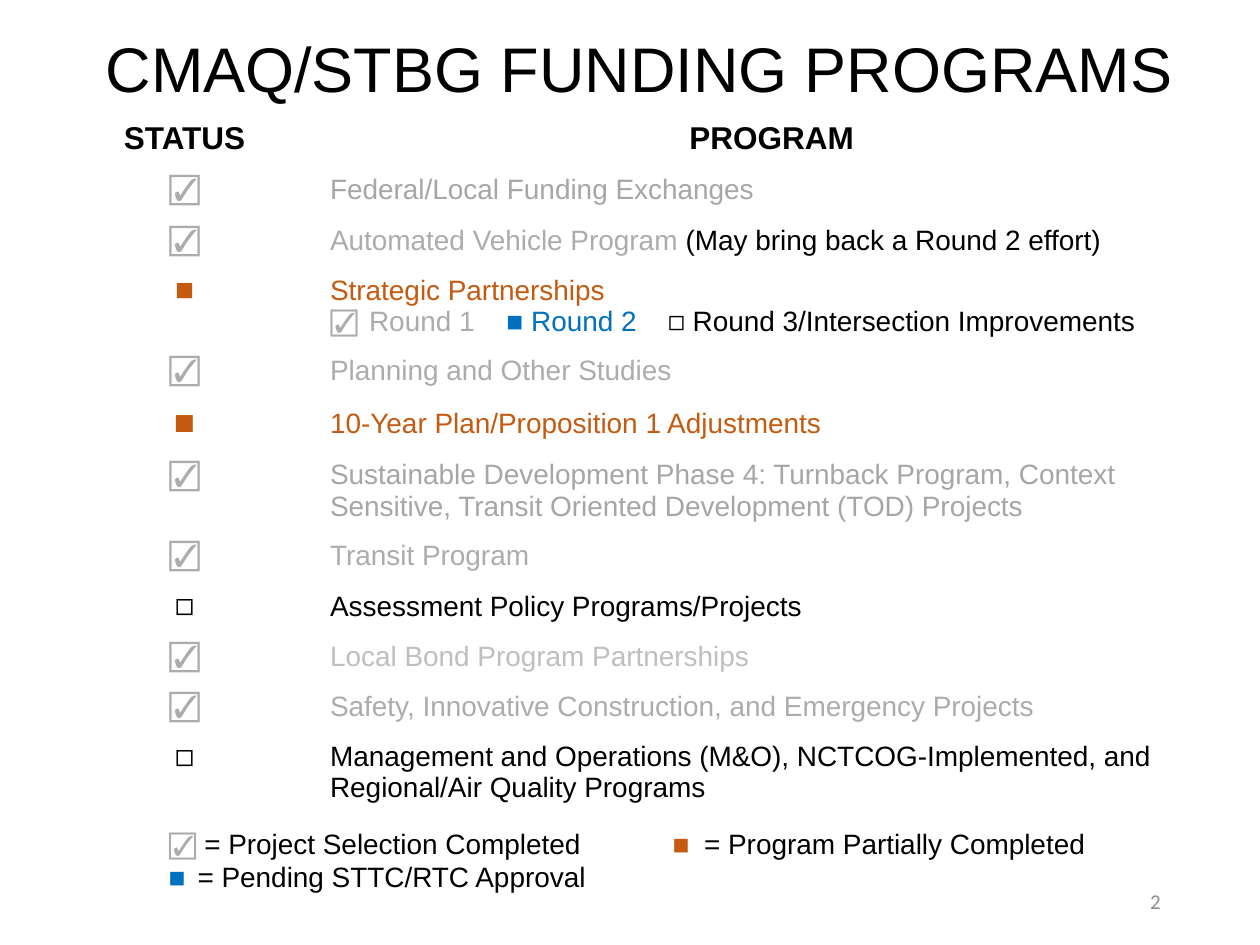
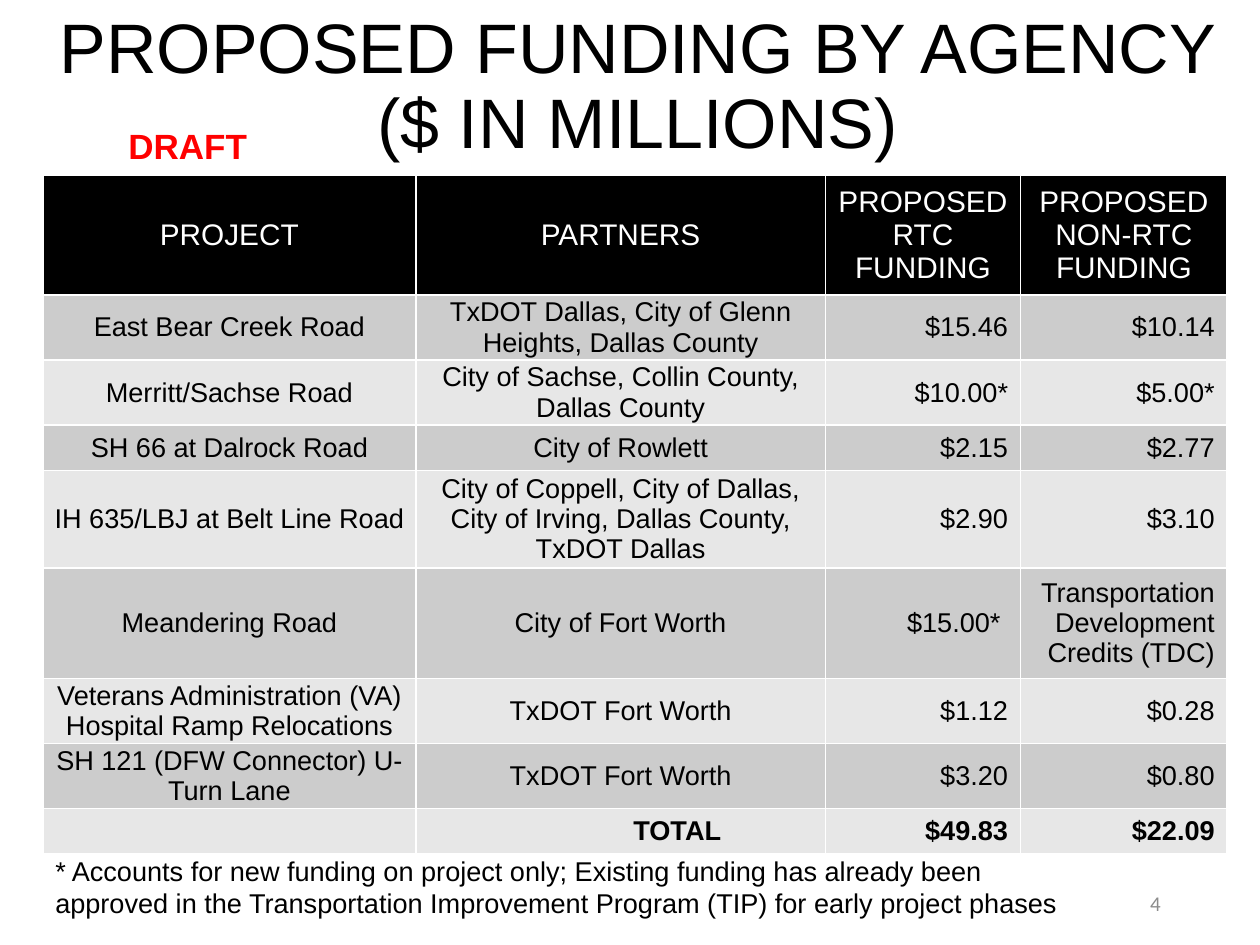
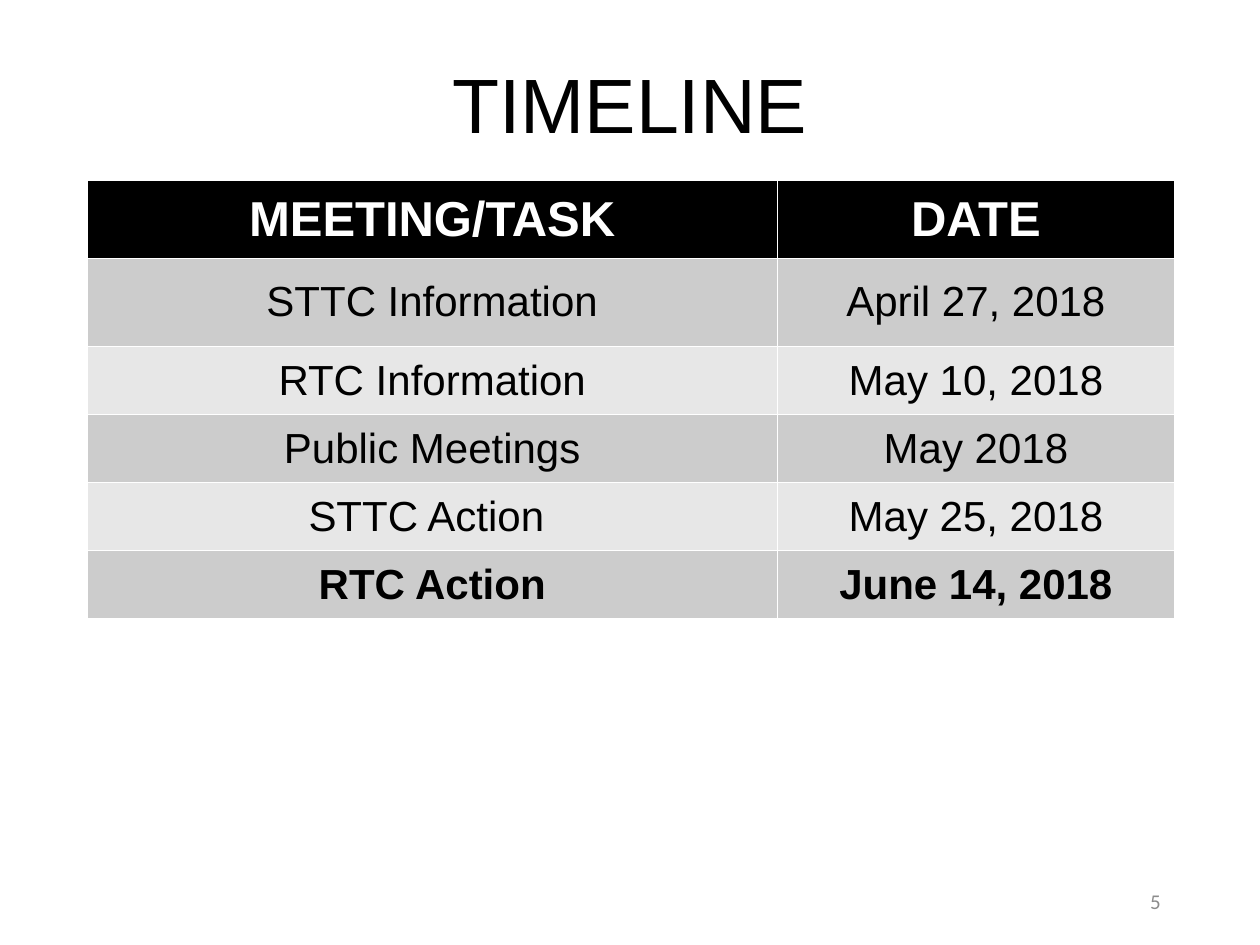
"""Builds three slides on funding programs, proposed funding and the timeline."""
from lxml import etree
from pptx import Presentation
from pptx import util as u
from pptx.dml.color import RGBColor
from pptx.enum import text
from pptx.oxml import ns

BLACK, WHITE, RED, PAGE_GREY = "000000", "FFFFFF", "FF0000", "8C8C8C"
DONE, DONE_DARK, DONE_LIGHT = "AFABAB", "A6A6A6", "BFBFBF"
PARTIAL, PENDING = "C55A11", "0070C0"
BANDS = "CCCCCC", "E7E7E7"
LEFT, CENTER, RIGHT = text.PP_ALIGN.LEFT, text.PP_ALIGN.CENTER, text.PP_ALIGN.RIGHT
TOP, MIDDLE = text.MSO_ANCHOR.TOP, text.MSO_ANCHOR.MIDDLE

COMPLETED = "☑", DONE, 18
PARTLY = "■", PARTIAL, 18
PARTLY_LARGE = "■", PARTIAL, 20
OPEN = "◻", BLACK, 18

PROGRAMS = [
    (0.23, COMPLETED, [[("Federal/Local Funding Exchanges", DONE_DARK)]]),
    (0.23, COMPLETED, [[("Automated Vehicle Program ", DONE),
                        ("(May bring back a Round 2 effort)", BLACK)]]),
    (0.37, PARTLY, [[("Strategic Partnerships", PARTIAL)],
                    [("☑", DONE), ("\tRound 1", DONE), ("\t■ ", PENDING, True),
                     ("Round 2", PENDING), ("\t◻ Round 3/Intersection Improvements", BLACK)]]),
    (0.37, COMPLETED, [[("Planning and Other Studies", DONE)]]),
    (0.4, PARTLY_LARGE, [[("10-Year Plan/Proposition 1 Adjustments", PARTIAL)]]),
    (0.59, COMPLETED, [[("Sustainable Development Phase 4: Turnback Program, Context Sensitive, "
                         "Transit Oriented Development (TOD) Projects", DONE_DARK)]]),
    (0.37, COMPLETED, [[("Transit Program", DONE)]]),
    (0.37, OPEN, [[("Assessment Policy Programs/Projects", BLACK)]]),
    (0.37, COMPLETED, [[("Local Bond Program Partnerships", DONE_LIGHT)]]),
    (0.4, COMPLETED, [[("Safety, Innovative Construction, and Emergency Projects", DONE)]]),
    (0.59, OPEN, [[("Management and Operations (M&O), NCTCOG-Implemented, and "
                    "Regional/Air Quality Programs", BLACK)]]),
]
ROUND_TABS = 0.31, 1.4, 2.68

LEGEND = [
    [("☑ ", DONE, True), ("= Project Selection Completed", BLACK),
     ("\t■", PARTIAL, True), ("\t= Program Partially Completed", BLACK)],
    [("■", PENDING, True), ("\t= Pending STTC/RTC Approval", BLACK)],
]
LEGEND_TABS = 0.23, 4, 4.25

FUNDING = [
    ("PROJECT", "PARTNERS", "PROPOSED RTC FUNDING", "PROPOSED NON-RTC FUNDING"),
    ("East Bear Creek Road", "TxDOT Dallas, City of Glenn Heights, Dallas County",
     "$15.46", "$10.14"),
    ("Merritt/Sachse Road", "City of Sachse, Collin County, Dallas County", "$10.00*", "$5.00*"),
    ("SH 66 at Dalrock Road", "City of Rowlett", "$2.15", "$2.77"),
    ("IH 635/LBJ at Belt Line Road",
     "City of Coppell, City of Dallas, City of Irving, Dallas County, TxDOT Dallas",
     "$2.90", "$3.10"),
    ("Meandering Road", "City of Fort Worth", "$15.00* ",
     "Transportation Development Credits (TDC)"),
    ("Veterans Administration (VA) Hospital Ramp Relocations", "TxDOT Fort Worth",
     "$1.12", "$0.28"),
    ("SH 121 (DFW Connector) U-Turn Lane", "TxDOT Fort Worth", "$3.20", "$0.80"),
    ("", "TOTAL", "$49.83", "$22.09"),
]
FUNDING_NOTE = ("* Accounts for new funding on project only; Existing funding has already been "
                "approved in the Transportation Improvement Program (TIP) for early project phases")

TIMELINE = [
    ("MEETING/TASK", "DATE"),
    ("STTC Information", "April 27, 2018"),
    ("RTC Information", "May 10, 2018"),
    ("Public Meetings", "May 2018"),
    ("STTC Action ", "May 25, 2018"),
    ("RTC Action", "June 14, 2018"),
]


def color(value):
    return RGBColor.from_string(value)


def write(frame, lines, size, align=LEFT, font="Arial", spacing=None, tabs=()):
    """Fill a text frame with lines of (text, colour, bold) runs."""
    for index, line in enumerate(lines):
        paragraph = frame.add_paragraph() if index else frame.paragraphs[0]
        paragraph.alignment = align
        if spacing:
            paragraph.line_spacing = spacing
        if tabs:
            stops = etree.SubElement(paragraph._p.get_or_add_pPr(), ns.qn("a:tabLst"))
            for position in tabs:
                etree.SubElement(stops, ns.qn("a:tab"), pos=str(u.Inches(position)), algn="l")
        for content, fill, *bold in line:
            run = paragraph.add_run()
            run.text = content
            run.font.name, run.font.size = font, u.Pt(size)
            run.font.bold = bool(bold and bold[0])
            run.font.color.rgb = color(fill)


def add_text(slide, box, lines, size, anchor=TOP, **style):
    frame = slide.shapes.add_textbox(*map(u.Inches, box)).text_frame
    frame.word_wrap = True
    frame.vertical_anchor = anchor
    write(frame, lines, size, **style)


def add_slide(presentation, title, box, size, number, number_top=6.95):
    slide = presentation.slides.add_slide(presentation.slide_layouts[6])
    add_text(slide, box, [[(title, BLACK)]], size, MIDDLE, align=CENTER, spacing=0.9)
    add_text(slide, (7.06, number_top, 2.25, 0.4), [[(number, PAGE_GREY)]], 12, MIDDLE,
             align=RIGHT, font="Calibri")
    return slide


def add_table(slide, left, top, widths, heights):
    box = map(u.Inches, (left, top, sum(widths), sum(heights)))
    table = slide.shapes.add_table(len(heights), len(widths), *box).table
    for column, width in zip(table.columns, widths):
        column.width = u.Inches(width)
    for row, height in zip(table.rows, heights):
        row.height = u.Inches(height)
    return table


def fill_banded(table, rows, head_size, body_size, head_bold, aligns):
    """Write a black header, striped body rows and a bold last row."""
    last = len(rows) - 1
    for r, row in enumerate(rows):
        for c, content in enumerate(row):
            cell = table.cell(r, c)
            cell.vertical_anchor = MIDDLE
            cell.fill.solid()
            cell.fill.fore_color.rgb = color(BANDS[(r - 1) % 2] if r else BLACK)
            run = (content, BLACK, r == last) if r else (content, WHITE, head_bold)
            write(cell.text_frame, [[run]] if content else [], body_size if r else head_size,
                  align=aligns[c] if r else CENTER)


def build_programs(presentation):
    slide = add_slide(presentation, "CMAQ/STBG FUNDING PROGRAMS", (0.44, 0.07, 9.27, 1.01), 36, "2")
    heights = [0.37] + [height for height, _, _ in PROGRAMS]
    table = add_table(slide, 0.41, 0.91, (2.11, 7.21), heights)
    for cell in table.iter_cells():
        cell.fill.background()
    for c, heading in enumerate(("STATUS", "PROGRAM")):
        write(table.cell(0, c).text_frame, [[(heading, BLACK, True)]], 18, CENTER)
    for r, (_, (mark, fill, size), lines) in enumerate(PROGRAMS, 1):
        write(table.cell(r, 0).text_frame, [[(mark, fill, mark != "◻")]], size, CENTER)
        program = table.cell(r, 1)
        program.vertical_anchor = MIDDLE
        write(program.text_frame, lines, 16, tabs=ROUND_TABS if len(lines) > 1 else ())
    add_text(slide, (1.24, 6.51, 7.66, 0.64), LEGEND, 16, tabs=LEGEND_TABS)


def build_funding(presentation):
    slide = add_slide(presentation, "PROPOSED FUNDING BY AGENCY ($ IN MILLIONS)",
                      (0.34, 0.28, 9.44, 0.84), 40, "4", 6.97)
    table = add_table(slide, 0.34, 1.39, (2.96, 3.25, 1.55, 1.64),
                      (0.91, 0.5, 0.5, 0.16, 0.74, 0.7, 0.5, 0.5, 0.34))
    fill_banded(table, FUNDING, 17, 15.5, False, (CENTER, CENTER, RIGHT, RIGHT))
    for r in range(1, len(FUNDING)):
        for c in range(2):
            cell = table.cell(r, c)
            cell.margin_left = cell.margin_right = cell.margin_top = cell.margin_bottom = 0
    table.cell(len(FUNDING) - 1, 1).margin_left = u.Inches(0.9)
    add_text(slide, (0.92, 0.94, 1.26, 0.44), [[("DRAFT", RED, True)]], 20)
    add_text(slide, (0.34, 6.73, 8.49, 0.64), [[(FUNDING_NOTE, BLACK)]], 15.5)


def build_timeline(presentation):
    slide = add_slide(presentation, "TIMELINE", (0.69, 0.3, 8.62, 1.13), 44, "5")
    table = add_table(slide, 0.69, 1.43, (5.48, 3.15), [0.62, 0.7] + [0.54] * 4)
    fill_banded(table, TIMELINE, 28, 24, True, (CENTER, CENTER))


def main():
    presentation = Presentation()
    presentation.slide_width, presentation.slide_height = u.Inches(10), u.Inches(7.5)
    build_programs(presentation)
    build_funding(presentation)
    build_timeline(presentation)
    presentation.save("out.pptx")


if __name__ == "__main__":
    main()
